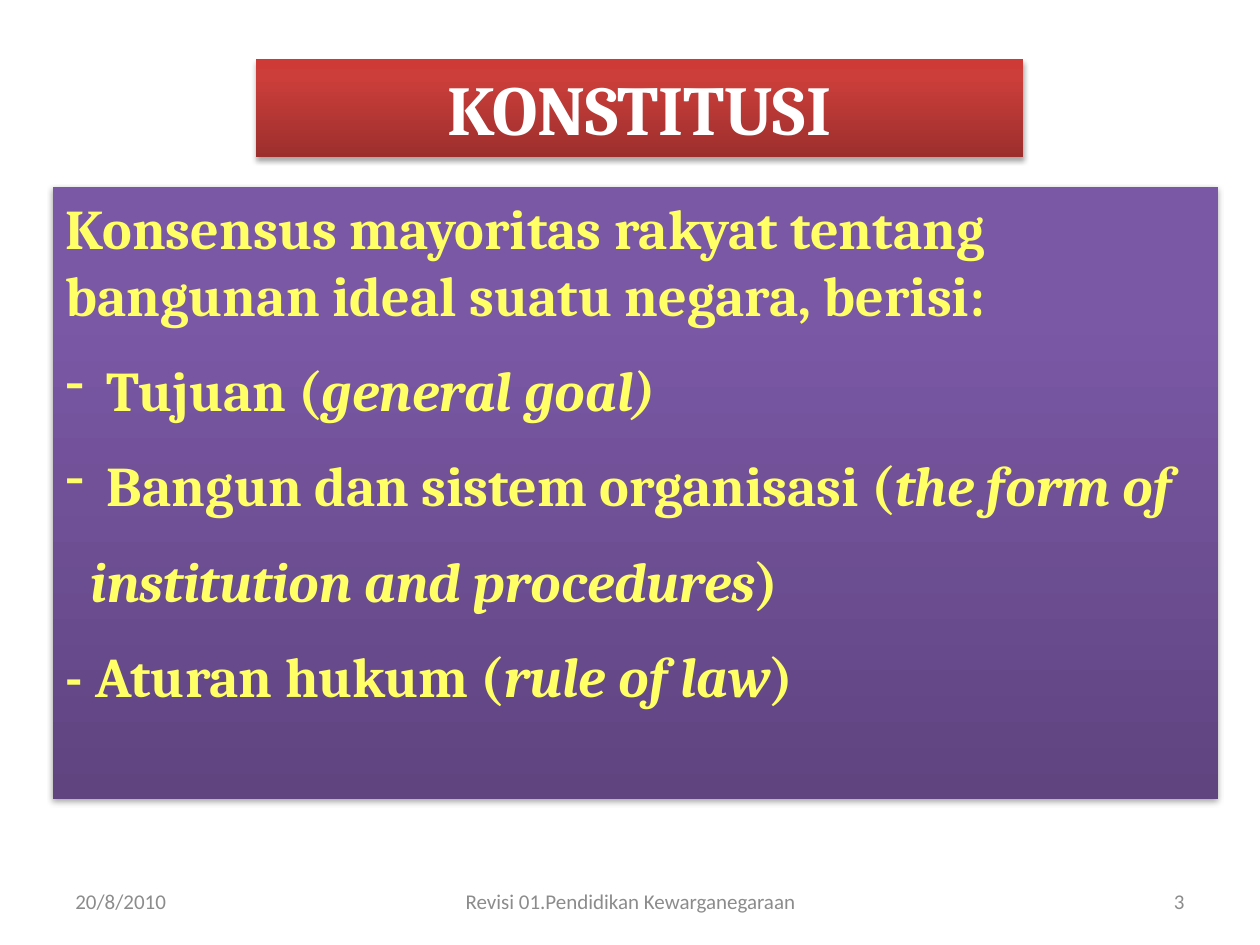
from dataclasses import dataclass

from lxml import etree
from pptx import Presentation
from pptx.dml.color import RGBColor
from pptx.enum.shapes import MSO_SHAPE
from pptx.enum.text import MSO_ANCHOR, PP_ALIGN
from pptx.oxml import parse_xml
from pptx.oxml.ns import nsdecls, qn
from pptx.shapes.autoshape import Shape
from pptx.slide import Slide
from pptx.util import Inches, Pt

RECTANGLE = MSO_SHAPE.RECTANGLE
TOP, MIDDLE = MSO_ANCHOR.TOP, MSO_ANCHOR.MIDDLE
LEFT, CENTER, RIGHT = PP_ALIGN.LEFT, PP_ALIGN.CENTER, PP_ALIGN.RIGHT

SLIDE_WIDTH, SLIDE_HEIGHT = Inches(10), Inches(7.5)
COLORS = {
    "footer": "8C8C8C",
    "title": "FFFFFF",
    "body": "FFFF66",
    "shadow": "000000",
}
RED_GRADIENT = {0: "9C2F2D", 80: "CB3E3A", 100: "CE3B37"}
PURPLE_GRADIENT = {0: "5F4480", 80: "7B58A6", 100: "7C57A8"}


@dataclass(frozen=True)
class Area:
    """A rectangle given as shares of the slide's width and height."""
    left: float
    top: float
    width: float
    height: float

    def lengths(self) -> tuple[int, int, int, int]:
        return (int(self.left * SLIDE_WIDTH), int(self.top * SLIDE_HEIGHT),
                int(self.width * SLIDE_WIDTH), int(self.height * SLIDE_HEIGHT))


@dataclass(frozen=True)
class TextStyle:
    font: str
    size: int
    color: str
    bold: bool = False


@dataclass(frozen=True)
class Line:
    """One paragraph: (text, italic) runs, with its indent in inches."""
    runs: tuple[tuple[str, bool], ...]
    align: PP_ALIGN = LEFT
    indent: float = 0
    bullet: str = ""


@dataclass(frozen=True)
class Panel:
    area: Area
    gradient: dict[int, str]
    style: TextStyle
    lines: tuple[Line, ...]


@dataclass(frozen=True)
class FooterItem:
    left: float
    width: float
    line: Line


FOOTER_STYLE = TextStyle("Calibri", 12, COLORS["footer"])
FOOTER_TOP, FOOTER_HEIGHT = 0.927, 0.053
FOOTER = (
    FooterItem(0.05, 0.233, Line((("20/8/2010", False),))),
    FooterItem(0.342, 0.317, Line((("Revisi 01.Pendidikan Kewarganegaraan", False),), CENTER)),
    FooterItem(0.717, 0.233, Line((("3", False),), RIGHT)),
)
PANELS = (
    Panel(
        Area(0.203, 0.063, 0.609, 0.103), RED_GRADIENT,
        TextStyle("Cambria", 40, COLORS["title"], bold=True),
        (Line((("KONSTITUSI", False),), CENTER),),
    ),
    Panel(
        Area(0.042, 0.198, 0.925, 0.648), PURPLE_GRADIENT,
        TextStyle("Cambria", 32, COLORS["body"], bold=True),
        (
            Line((("Konsensus mayoritas rakyat tentang bangunan ideal suatu negara, berisi:", False),)),
            Line((("Tujuan (", False), ("general goal)", True)), indent=0.33, bullet="-"),
            Line((("Bangun dan sistem organisasi (", False), ("the form of", True)),
                 indent=0.33, bullet="-"),
            Line((("institution and procedures", True), (")", False)), indent=0.2),
            Line((("- Aturan hukum (", False), ("rule of law", True), (")", False))),
        ),
    ),
)


def write_text(shape: Shape, lines: tuple[Line, ...], style: TextStyle, anchor: MSO_ANCHOR) -> None:
    frame = shape.text_frame
    frame.word_wrap = True
    frame.vertical_anchor = anchor
    for index, line in enumerate(lines):
        paragraph = frame.add_paragraph() if index else frame.paragraphs[0]
        paragraph.alignment = line.align
        if index:
            paragraph.space_before = Pt(style.size / 2)
        properties = paragraph._p.get_or_add_pPr()
        properties.set("marL", str(Inches(line.indent)))
        if line.bullet:
            properties.set("indent", str(-Inches(line.indent)))
            etree.SubElement(properties, qn("a:buChar"), char=line.bullet)
        for text, italic in line.runs:
            run = paragraph.add_run()
            run.text = text
            run.font.name = style.font
            run.font.size = Pt(style.size)
            run.font.bold = style.bold
            run.font.italic = italic
            run.font.color.rgb = RGBColor.from_string(style.color)


def apply_gradient_and_shadow(shape: Shape, gradient: dict[int, str]) -> None:
    """Shade the shape from bottom to top and drop a soft shadow below it."""
    shape.line.fill.background()
    stops = "".join(f'<a:gs pos="{share * 1000}"><a:srgbClr val="{color}"/></a:gs>'
                    for share, color in gradient.items())
    fill = parse_xml(f'<a:gradFill {nsdecls("a")} rotWithShape="1"><a:gsLst>{stops}</a:gsLst>'
                     '<a:lin ang="16200000" scaled="0"/></a:gradFill>')
    shadow = parse_xml(
        f'<a:effectLst {nsdecls("a")}><a:outerShdw blurRad="{Pt(3.1)}" dist="{Pt(1.8)}" '
        f'dir="5400000" rotWithShape="0"><a:srgbClr val="{COLORS["shadow"]}">'
        '<a:alpha val="35000"/></a:srgbClr></a:outerShdw></a:effectLst>')
    properties = shape._element.spPr
    properties.find(qn("a:prstGeom")).addnext(fill)
    properties.append(shadow)


def add_panel(slide: Slide, panel: Panel) -> None:
    shape = slide.shapes.add_shape(RECTANGLE, *panel.area.lengths())
    apply_gradient_and_shadow(shape, panel.gradient)
    write_text(shape, panel.lines, panel.style, TOP)


def add_footer_item(slide: Slide, item: FooterItem) -> None:
    area = Area(item.left, FOOTER_TOP, item.width, FOOTER_HEIGHT)
    shape = slide.shapes.add_textbox(*area.lengths())
    write_text(shape, (item.line,), FOOTER_STYLE, MIDDLE)


def main() -> None:
    presentation = Presentation()
    presentation.slide_width, presentation.slide_height = SLIDE_WIDTH, SLIDE_HEIGHT
    slide = presentation.slides.add_slide(presentation.slide_layouts[6])
    for item in FOOTER:
        add_footer_item(slide, item)
    for panel in PANELS:
        add_panel(slide, panel)
    presentation.save("out.pptx")


if __name__ == "__main__":
    main()
